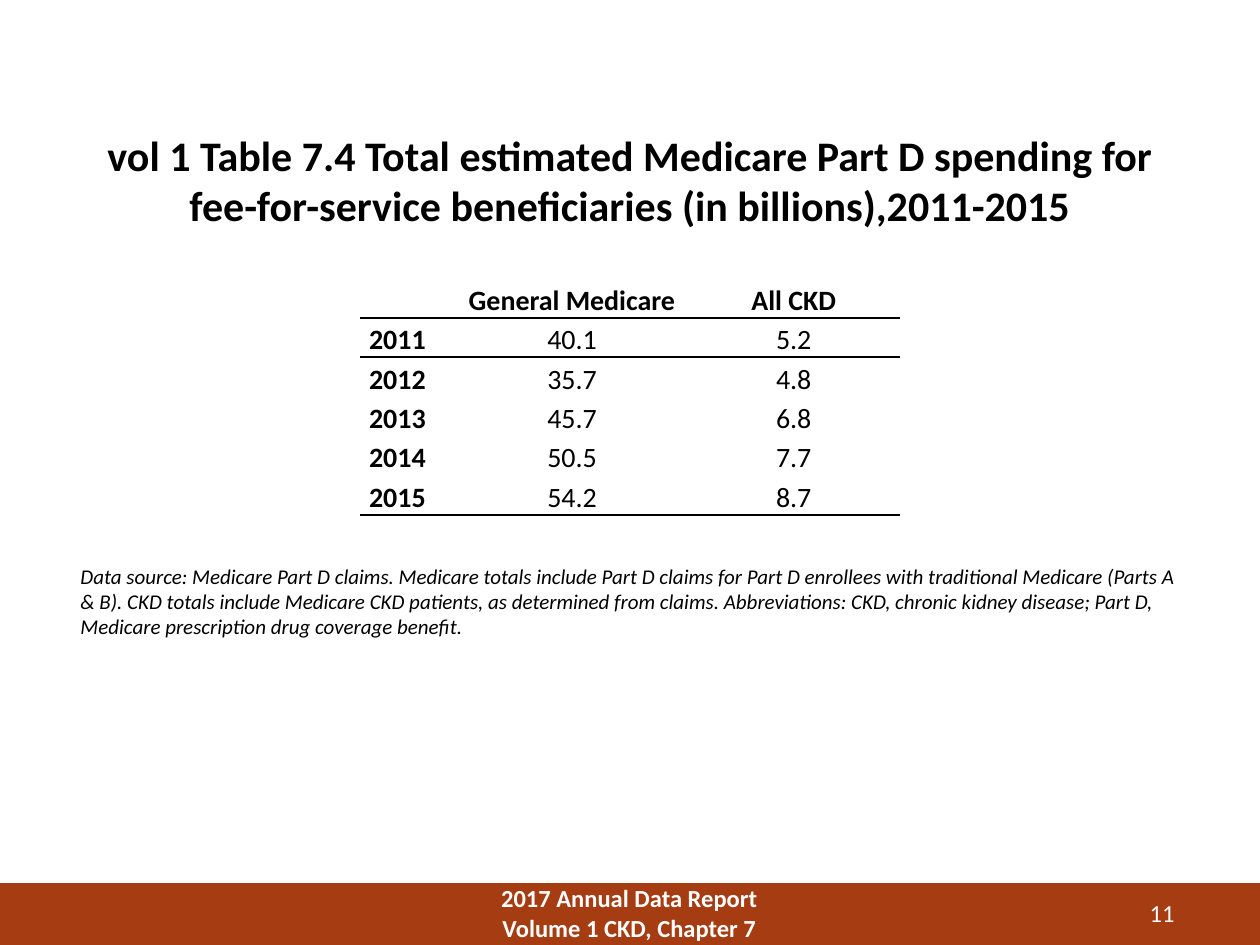
from lxml import etree
from pptx import Presentation
from pptx.dml.color import RGBColor
from pptx.enum.shapes import MSO_SHAPE
from pptx.enum.text import MSO_ANCHOR, PP_ALIGN
from pptx.oxml.ns import qn
from pptx.util import Inches, Pt

LEFT, CENTER, RIGHT = PP_ALIGN.LEFT, PP_ALIGN.CENTER, PP_ALIGN.RIGHT
TOP, MIDDLE = MSO_ANCHOR.TOP, MSO_ANCHOR.MIDDLE
NO_GRID_STYLE = "{2D5ABB26-0587-4C30-8999-92F81FD0307C}"

THEME = {
    "font": "Calibri",
    "ink": RGBColor(0x00, 0x00, 0x00),
    "bar": RGBColor(0xA6, 0x3C, 0x12),
    "light": RGBColor(0xFF, 0xFF, 0xFF),
    "title": Pt(24),
    "table": Pt(16),
    "footer": Pt(14),
    "note": Pt(12),
}


def write(frame, lines, size, color="ink", align=LEFT, anchor=TOP, spacing=None, **style):
    """Fill a text frame with one paragraph per line, all in one format."""
    frame.word_wrap = True
    frame.vertical_anchor = anchor
    for i, line in enumerate(lines):
        paragraph = frame.paragraphs[0] if i == 0 else frame.add_paragraph()
        paragraph.text = line
        paragraph.alignment = align
        paragraph.line_spacing = spacing
        font_format = {"name": THEME["font"], "size": THEME[size], **style}
        for attribute, value in font_format.items():
            setattr(paragraph.font, attribute, value)
        paragraph.font.color.rgb = THEME[color]


def add_rule(cell, side):
    """Draw a 1 pt line on the given side of a table cell."""
    line = etree.Element(qn(f"a:{side}"), w=str(Pt(1)))
    fill = etree.SubElement(line, qn("a:solidFill"))
    etree.SubElement(fill, qn("a:srgbClr"), val=str(THEME["ink"]))
    cell._tc.get_or_add_tcPr().insert(0, line)


prs = Presentation()
prs.slide_width, prs.slide_height = Inches(10), Inches(7.5)
slide = prs.slides.add_slide(prs.slide_layouts[5])

# Title
title = slide.shapes.title
title.left, title.top = Inches(0.48), Inches(0.95)
title.width, title.height = Inches(9.04), Inches(0.95)
write(title.text_frame,
      ["vol 1 Table 7.4 Total estimated Medicare Part D spending for "
       "fee-for-service beneficiaries (in billions),2011-2015"],
      "title", align=CENTER, anchor=MIDDLE, bold=True)

# Footer bar
footer_bar = slide.shapes.add_shape(
    MSO_SHAPE.RECTANGLE, 0, Inches(7.01), prs.slide_width, Inches(0.49))
footer_bar.shadow.inherit = False
footer_bar.fill.solid()
footer_bar.fill.fore_color.rgb = THEME["bar"]
footer_bar.line.fill.background()

# Spending table
spending = [
    ("", "General Medicare", "All CKD"),
    ("2011", "40.1", "5.2"),
    ("2012", "35.7", "4.8"),
    ("2013", "45.7", "6.8"),
    ("2014", "50.5", "7.7"),
    ("2015", "54.2", "8.7"),
]
column_widths = [0.76, 1.84, 1.68]
row_height = 0.31
last_row = len(spending) - 1
table = slide.shapes.add_table(
    len(spending), len(column_widths), Inches(2.86), Inches(2.21),
    Inches(sum(column_widths)), Inches(row_height * len(spending))).table
table.first_row = table.horz_banding = False
table._tbl.tblPr.find(qn("a:tableStyleId")).text = NO_GRID_STYLE
for column, width in zip(table.columns, column_widths):
    column.width = Inches(width)
for r, values in enumerate(spending):
    table.rows[r].height = Inches(row_height)
    for c, value in enumerate(values):
        cell = table.cell(r, c)
        cell.margin_left = cell.margin_right = Inches(0.07)
        cell.margin_top = cell.margin_bottom = 0
        cell.fill.background()
        write(cell.text_frame, [value], "table", align=CENTER if c else LEFT,
              spacing=1.15, bold=r == 0 or c == 0)
        cell.vertical_anchor = MIDDLE
        if r in (0, last_row):
            add_rule(cell, "lnB")
        if r == 1:
            add_rule(cell, "lnT")

# Data note, footer and page number
captions = [
    ((0.54, 4.42, 8.92, 0.71),
     ["Data source: Medicare Part D claims. Medicare totals include Part D claims for "
      "Part D enrollees with traditional Medicare (Parts A & B). CKD totals include "
      "Medicare CKD patients, as determined from claims. Abbreviations: CKD, chronic "
      "kidney disease; Part D, Medicare prescription drug coverage benefit."],
     {"size": "note", "italic": True}),
    ((3.58, 6.96, 2.83, 0.54),
     ["2017 Annual Data Report", "Volume 1 CKD, Chapter 7"],
     {"size": "footer", "color": "light", "align": CENTER, "bold": True}),
    ((8.42, 7.08, 1, 0.3), ["11"],
     {"size": "footer", "color": "light", "align": RIGHT}),
]
for place, lines, text_format in captions:
    caption = slide.shapes.add_textbox(*map(Inches, place))
    write(caption.text_frame, lines, **text_format)

prs.save("out.pptx")
